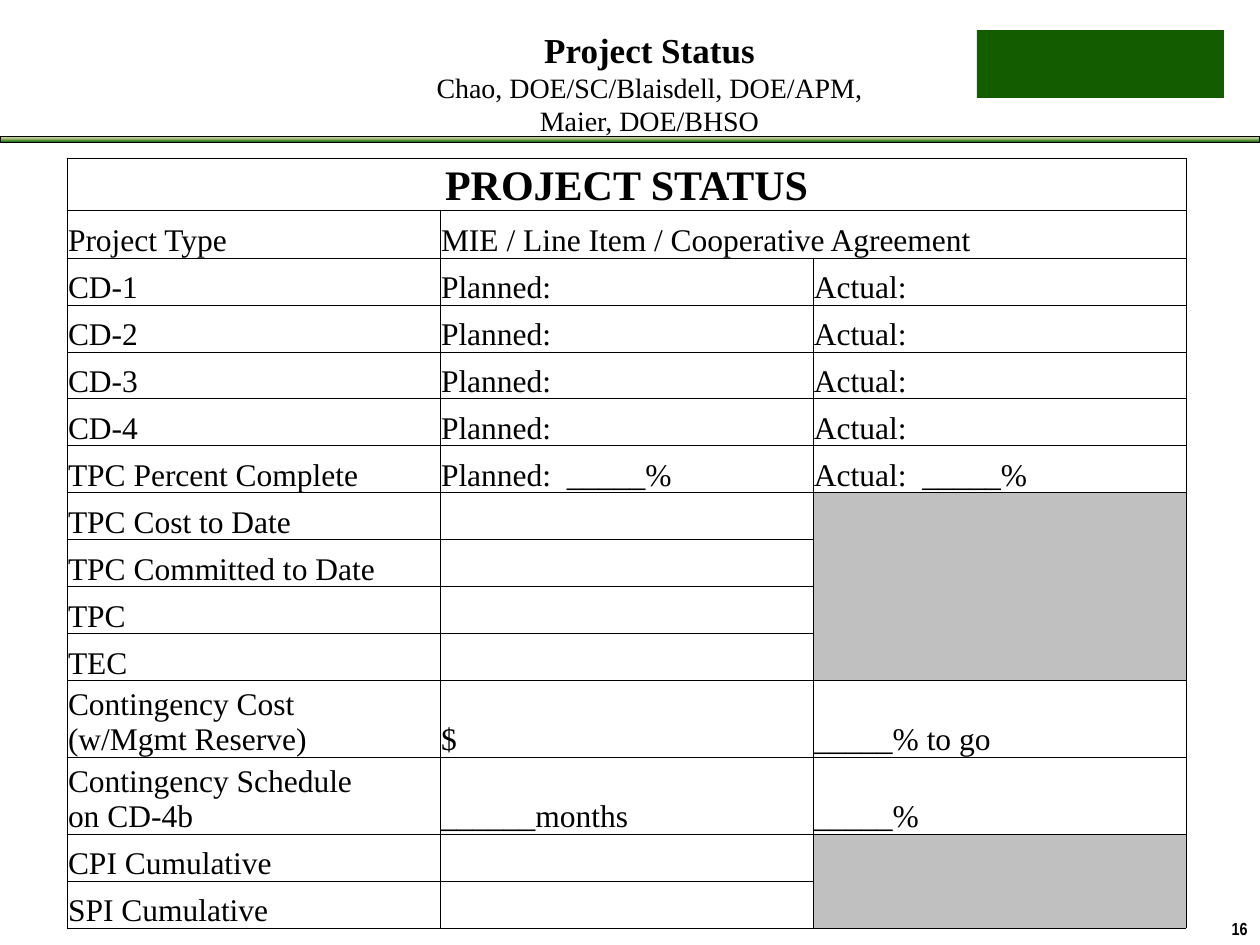
"""Build the project status slide with its milestone and cost table."""
from dataclasses import dataclass

from pptx import Presentation
from pptx import util as u
from pptx.dml.color import RGBColor
from pptx.enum import shapes, text
from pptx.oxml import parse_xml
from pptx.oxml.ns import nsdecls


@dataclass(frozen=True)
class Theme:
    ink: str = "000000"
    brand: str = "135C00"
    blocked: str = "C0C0C0"
    band: tuple = ((0, "DDEBCF"), (50, "9CB86E"), (100, "156B13"))
    serif: str = "Times New Roman"
    narrow: str = "Arial Narrow"
    hairline: float = 0.5
    number: int = 10
    subtitle: int = 16
    body: int = 18
    title: int = 20
    heading: int = 24


def px(length):
    return u.Emu(round(length * 914400 / 126))


class StatusSlide:
    def __init__(self, slide, theme):
        self.slide = slide
        self.theme = theme

    def run(self, paragraph, words, size, face=None, bold=False):
        run = paragraph.add_run()
        run.text = words
        run.font.size = u.Pt(size)
        run.font.name = face or self.theme.serif
        run.font.bold = bold
        run.font.color.rgb = RGBColor.from_string(self.theme.ink)

    def title(self, box, entries):
        title = self.slide.shapes.title
        title.left, title.top, title.width, title.height = map(px, box)
        frame = title.text_frame
        frame.auto_size = text.MSO_AUTO_SIZE.NONE
        frame.vertical_anchor = text.MSO_ANCHOR.MIDDLE
        paragraph = frame.paragraphs[0]
        paragraph.alignment = text.PP_ALIGN.CENTER
        for index, (words, style) in enumerate(entries):
            if index:
                paragraph.add_line_break()
            self.run(paragraph, words, **style)

    def page_number(self, box, words):
        frame = self.slide.shapes.add_textbox(*map(px, box)).text_frame
        frame.word_wrap = True
        frame.paragraphs[0].alignment = text.PP_ALIGN.RIGHT
        self.run(frame.paragraphs[0], words, self.theme.number, self.theme.narrow, True)

    def rectangle(self, box):
        rectangle = self.slide.shapes.add_shape(shapes.MSO_SHAPE.RECTANGLE, *map(px, box))
        rectangle.shadow.inherit = False
        return rectangle

    def emblem(self, box):
        emblem = self.rectangle(box)
        emblem.fill.solid()
        emblem.fill.fore_color.rgb = RGBColor.from_string(self.theme.brand)
        emblem.line.fill.background()

    def band(self, box):
        band = self.rectangle(box)
        band.line.color.rgb = RGBColor.from_string(self.theme.ink)
        band.line.width = u.Pt(self.theme.hairline)
        band.fill.gradient()
        stops = "".join(
            f'<a:gs pos="{place * 1000}"><a:srgbClr val="{color}"/></a:gs>'
            for place, color in self.theme.band
        )
        gradient = band._element.spPr.find("{*}gradFill")
        gradient.replace(
            gradient.find("{*}gsLst"),
            parse_xml(f'<a:gsLst {nsdecls("a")}>{stops}</a:gsLst>'),
        )
        band.fill.gradient_angle = 270

    def border(self, cell):
        properties = cell._tc.get_or_add_tcPr()
        for side in "LRTB":
            properties.append(parse_xml(
                f'<a:ln{side} {nsdecls("a")} w="{u.Pt(self.theme.hairline)}">'
                f'<a:solidFill><a:srgbClr val="{self.theme.ink}"/></a:solidFill></a:ln{side}>'
            ))

    def cell(self, cell, words, heading, blocked):
        cell.margin_left = cell.margin_right = cell.margin_top = px(1)
        cell.margin_bottom = 0
        cell.vertical_anchor = text.MSO_ANCHOR.BOTTOM
        self.border(cell)
        if blocked:
            cell.fill.solid()
            cell.fill.fore_color.rgb = RGBColor.from_string(self.theme.blocked)
        else:
            cell.fill.background()
        frame = cell.text_frame
        size = self.theme.heading if heading else self.theme.body
        for index, line in enumerate(words.splitlines()):
            paragraph = frame.add_paragraph() if index else frame.paragraphs[0]
            paragraph.alignment = text.PP_ALIGN.CENTER if heading else text.PP_ALIGN.LEFT
            self.run(paragraph, line, size, bold=heading)

    def table(self, corner, column_width, heights, rows, spans, blocked):
        columns = len(rows[0])
        size = column_width * columns, sum(heights)
        table = self.slide.shapes.add_table(
            len(rows), columns, *map(px, (*corner, *size))).table
        table.first_row = table.horz_banding = False
        for column in table.columns:
            column.width = px(column_width)
        for row, height in zip(table.rows, heights):
            row.height = px(height)
        for r, row in enumerate(rows):
            for c, words in enumerate(row):
                self.cell(table.cell(r, c), words, r == 0, (r, c) in blocked)
        for first, last in spans:
            table.cell(*first).merge(table.cell(*last))


MILESTONES = [(f"CD-{level}", "Planned:", "Actual:") for level in range(1, 5)]
COSTS = ["TPC Cost to Date", "TPC Committed to Date", "TPC", "TEC"]
INDEXES = ["CPI Cumulative", "SPI Cumulative"]
ROWS = [
    ("PROJECT STATUS", "", ""),
    ("Project Type", "MIE / Line Item / Cooperative Agreement", ""),
    *MILESTONES,
    ("TPC Percent Complete", "Planned:  _____%", "Actual:  _____%"),
    *[(cost, "", "") for cost in COSTS],
    ("Contingency Cost\n(w/Mgmt Reserve)", "$", "_____% to go"),
    ("Contingency Schedule\non CD-4b", "______months", "_____%"),
    *[(index, "", "") for index in INDEXES],
]
HEIGHTS = [52, 48] + [47] * 9 + [73, 71] + [47] * 2
SPANS = [((0, 0), (0, 2)), ((1, 1), (1, 2)), ((7, 2), (10, 2)), ((13, 2), (14, 2))]
BLOCKED = {(row, 2) for row in (7, 8, 9, 10, 13, 14)}


def main():
    theme = Theme()
    deck = Presentation()
    deck.slide_width, deck.slide_height = px(1260), px(945)
    status = StatusSlide(deck.slides.add_slide(deck.slide_layouts[5]), theme)
    status.band((0, 136, 1260, 6))
    status.emblem((977, 30, 247, 68))
    status.page_number((1208, 912, 52, 33), "16")
    status.title((356, 22, 587, 122), [
        ("Project Status", {"size": theme.title, "bold": True}),
        ("Chao, DOE/SC/Blaisdell, DOE/APM,", {"size": theme.subtitle}),
        ("Maier, DOE/BHSO", {"size": theme.subtitle}),
    ])
    status.table((67, 158), 373, HEIGHTS, ROWS, SPANS, BLOCKED)
    deck.save("out.pptx")


if __name__ == "__main__":
    main()
